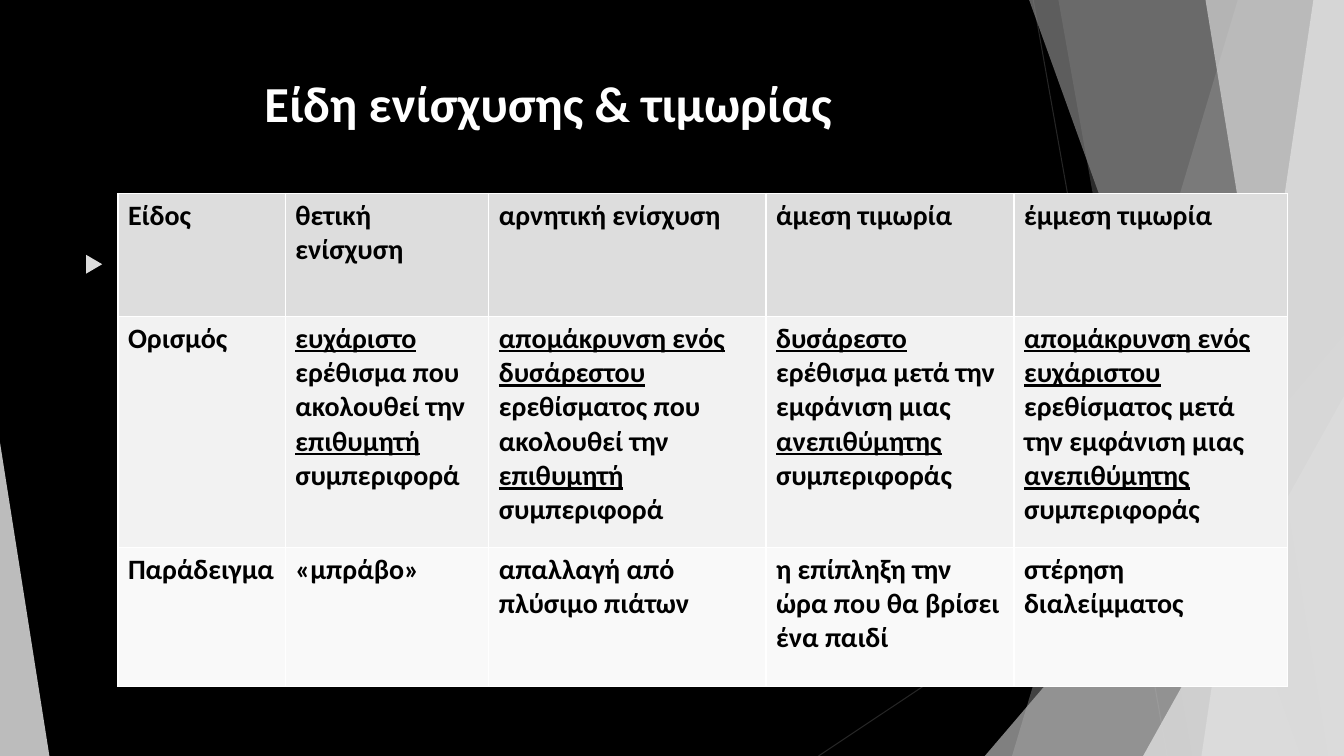
"""Build a slide with a table of kinds of reinforcement and punishment."""
from lxml.etree import SubElement
from pptx import Presentation
from pptx.dml.color import RGBColor
from pptx.enum.shapes import MSO_CONNECTOR, MSO_SHAPE
from pptx.enum.text import MSO_ANCHOR, PP_ALIGN
from pptx.oxml.ns import qn
from pptx.util import Pt

COLORS = {
    "black": "000000", "white": "FFFFFF", "line": "262626", "light": "DDDDDD",
    "silver": "B2B2B2", "gray": "858585", "pale": "EBEBEB",
    "definition": "F2F2F2", "example": "F9F9F9",
}
WIDTH, HEIGHT = 960, 540


def paint(shape, color, opacity):
    shape.shadow.inherit = False
    shape.line.fill.background()
    shape.fill.solid()
    shape.fill.fore_color.rgb = RGBColor.from_string(COLORS[color])
    for color_element in shape._element.spPr.iter(qn("a:srgbClr")):
        SubElement(color_element, qn("a:alpha"), val=str(opacity * 1000))


def add_run(paragraph, text, size, color):
    run = paragraph.add_run()
    run.text = text
    run.font.name = "Calibri"
    run.font.size = Pt(size)
    run.font.bold = True
    run.font.color.rgb = RGBColor.from_string(COLORS[color])
    return run


presentation = Presentation()
presentation.slide_width, presentation.slide_height = Pt(WIDTH), Pt(HEIGHT)
slide = presentation.slides.add_slide(presentation.slide_layouts[6])
slide.background.fill.solid()
slide.background.fill.fore_color.rgb = RGBColor.from_string(COLORS["black"])

for ends in [(738, 0, 833.76, HEIGHT), (WIDTH, 290.16, 584.64, HEIGHT)]:
    connector = slide.shapes.add_connector(MSO_CONNECTOR.STRAIGHT, *map(Pt, ends))
    connector.line.color.rgb = RGBColor.from_string(COLORS["line"])
    connector.line.width = Pt(0.75)
    SubElement(connector._element.spPr, qn("a:effectLst"))

facets = [
    ("band", (884.16, 722.88), "light", 30),
    ("band", (756, 851.76), "light", 20),
    ("triangle", (703.44, 239.76, WIDTH, 1), "silver", 72),
    ("band", (735.12, 929.52), "gray", 70),
    ("band", (938.16, 858.24), "pale", 70),
    ("band", (861.12, 948.96), "light", 65),
    ("triangle", (816.48, 282.96, WIDTH, 1), "light", 80),
    ("triangle", (0, 316.08, 35.28, 0), "light", 85),
]
for kind, geometry, color, opacity in facets:
    if kind == "band":
        top_x, bottom_x = geometry
        builder = slide.shapes.build_freeform(Pt(top_x), 0)
        builder.add_line_segments(
            [(Pt(WIDTH), 0), (Pt(WIDTH), Pt(HEIGHT)), (Pt(bottom_x), Pt(HEIGHT))]
        )
        facet = builder.convert_to_shape()
    else:
        left, top, right, apex = geometry
        facet = slide.shapes.add_shape(
            MSO_SHAPE.ISOSCELES_TRIANGLE,
            Pt(left), Pt(top), Pt(right - left), Pt(HEIGHT - top),
        )
        facet.adjustments[0] = apex
    paint(facet, color, opacity)

title = slide.shapes.add_textbox(Pt(53.28), Pt(48.24), Pt(676.8), Pt(103.68))
title.text_frame.word_wrap = True
title.text_frame.vertical_anchor = MSO_ANCHOR.TOP
heading = title.text_frame.paragraphs[0]
heading.alignment = PP_ALIGN.CENTER
add_run(heading, "Είδη ενίσχυσης & τιμωρίας", 36, "white")

marker = slide.shapes.build_freeform(Pt(61.5), Pt(182))
marker.add_line_segments([(Pt(73), Pt(188.75)), (Pt(61.5), Pt(195.5))])
paint(marker.convert_to_shape(), "light", 100)

column_widths = [119.52, 145.44, 198, 177.12, 195.12]
rows = [
    (87.84, "light", [
        "Είδος", "θετική ενίσχυση", "αρνητική ενίσχυση",
        "άμεση τιμωρία", "έμμεση τιμωρία",
    ]),
    (164.88, "definition", [
        "Ορισμός",
        "_ευχάριστο_ ερέθισμα που ακολουθεί την _επιθυμητή_ συμπεριφορά",
        "_απομάκρυνση ενός δυσάρεστου_ ερεθίσματος που ακολουθεί την "
        "_επιθυμητή_ συμπεριφορά",
        "_δυσάρεστο_ ερέθισμα μετά την εμφάνιση μιας _ανεπιθύμητης_ συμπεριφοράς",
        "_απομάκρυνση ενός ευχάριστου _ερεθίσματος μετά την εμφάνιση μιας "
        "_ανεπιθύμητης_ συμπεριφοράς",
    ]),
    (99.36, "example", [
        "Παράδειγμα", "«μπράβο»", "απαλλαγή από πλύσιμο πιάτων",
        "η επίπληξη την ώρα που θα βρίσει ένα παιδί", "στέρηση διαλείμματος",
    ]),
]
table = slide.shapes.add_table(
    len(rows), len(column_widths), Pt(84.24), Pt(138.24),
    Pt(sum(column_widths)), Pt(sum(height for height, _, _ in rows)),
).table
for column, width in zip(table.columns, column_widths):
    column.width = Pt(width)
for row, (height, color, texts) in zip(table.rows, rows):
    row.height = Pt(height)
    for cell, text in zip(row.cells, texts):
        properties = cell._tc.get_or_add_tcPr()
        for side in ("lnL", "lnR", "lnT", "lnB"):
            border = SubElement(properties, qn(f"a:{side}"), w=str(Pt(1)))
            border_fill = SubElement(border, qn("a:solidFill"))
            SubElement(border_fill, qn("a:srgbClr"), val=COLORS["white"])
        cell.fill.solid()
        cell.fill.fore_color.rgb = RGBColor.from_string(COLORS[color])
        for index, part in enumerate(text.split("_")):
            if part:
                run = add_run(cell.text_frame.paragraphs[0], part, 20, "black")
                run.font.underline = index % 2 == 1

presentation.save("out.pptx")
